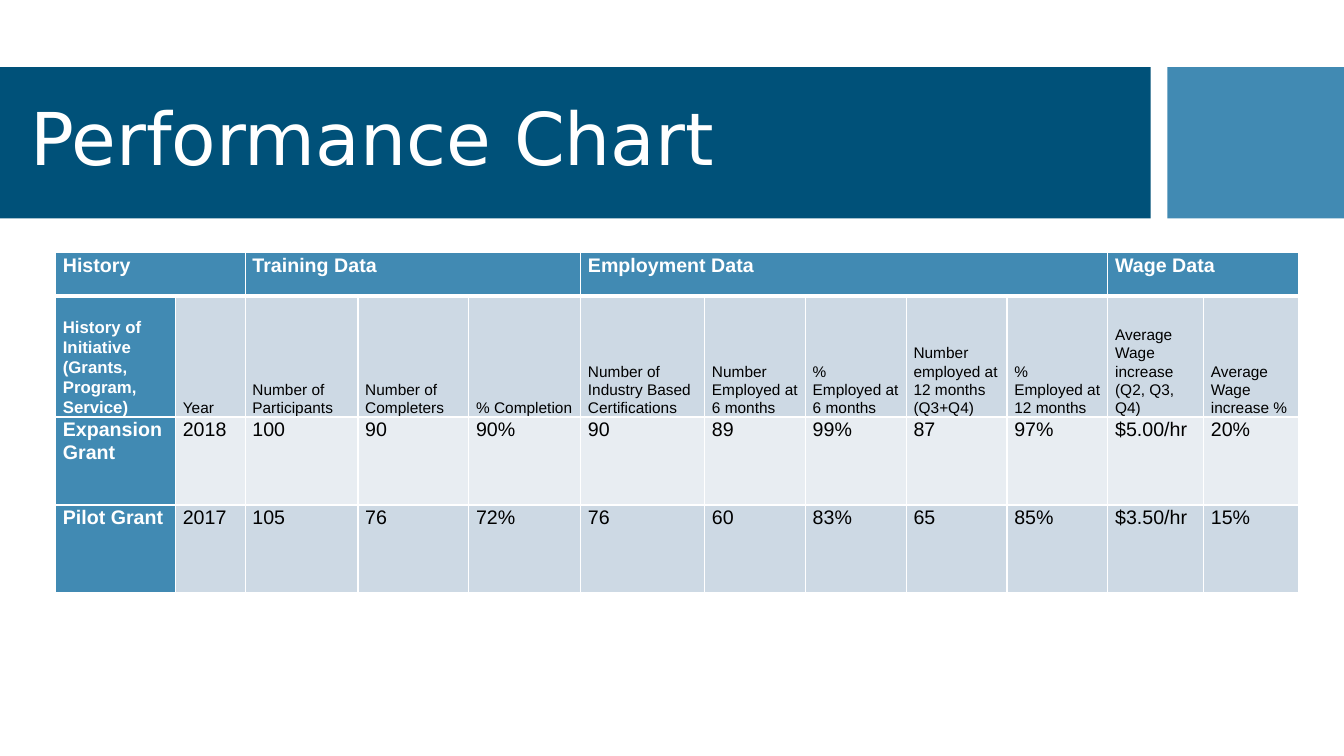
import pptx
import pptx.dml.color
import pptx.enum.shapes
import pptx.enum.text
import pptx.oxml
import pptx.oxml.ns
import pptx.util

Pt = pptx.util.Pt
RGBColor = pptx.dml.color.RGBColor
ANCHOR = pptx.enum.text.MSO_ANCHOR

NAVY = RGBColor(0x00, 0x51, 0x79)
BLUE = RGBColor(0x41, 0x8A, 0xB3)
BAND_DARK = RGBColor(0xCD, 0xD9, 0xE4)
BAND_LIGHT = RGBColor(0xE8, 0xED, 0xF2)
WHITE = RGBColor(0xFF, 0xFF, 0xFF)
BLACK = RGBColor(0x00, 0x00, 0x00)

COLUMN_WIDTHS = [85.7, 49.7, 80.6, 79.2, 79.9, 88.6, 72, 72, 72, 72, 68.4, 67.7]
ROW_HEIGHTS = [31, 86.4, 62.8, 62.8]
GROUPS = [("History", 2), ("Training Data", 3), ("Employment Data", 5), ("Wage Data", 2)]
ROWS = [
    ["History of Initiative (Grants, Program, Service)", "Year", "Number of Participants",
     "Number of Completers", "% Completion", "Number of Industry Based Certifications",
     "Number Employed at 6 months", "% Employed at 6 months",
     "Number employed at 12 months (Q3+Q4)", "% Employed at 12 months",
     "Average Wage increase (Q2, Q3, Q4)", "Average Wage increase %"],
    ["Expansion Grant", "2018", "100", "90", "90%", "90", "89", "99%", "87", "97%",
     "$5.00/hr", "20%"],
    ["Pilot Grant", "2017", "105", "76", "72%", "76", "60", "83%", "65", "85%",
     "$3.50/hr", "15%"],
]


class SlideBuilder:
    title_font = "DejaVu Sans"
    table_font = "Arial"

    def __init__(self, slide):
        self.slide = slide

    def band(self, left, top, width, height, color):
        shape = self.slide.shapes.add_shape(
            pptx.enum.shapes.MSO_SHAPE.RECTANGLE, Pt(left), Pt(top), Pt(width), Pt(height))
        shape.shadow.inherit = False
        shape.fill.solid()
        shape.fill.fore_color.rgb = color
        shape.line.fill.background()

    def title(self, text, left, top, width, height):
        """Format the title placeholder and bring it in front of the bands."""
        title = self.slide.shapes.title
        title.element.getparent().append(title.element)
        title.left, title.top, title.width, title.height = map(Pt, (left, top, width, height))
        frame = title.text_frame
        frame.text = text
        frame.word_wrap = True
        frame.auto_size = pptx.enum.text.MSO_AUTO_SIZE.NONE
        frame.vertical_anchor = ANCHOR.MIDDLE
        paragraph = frame.paragraphs[0]
        paragraph.alignment = pptx.enum.text.PP_ALIGN.LEFT
        paragraph.line_spacing = 0.9
        self.style(paragraph, self.title_font, 52, WHITE, False)

    def style(self, paragraph, name, size, color, bold):
        font = paragraph.font
        font.name, font.size, font.bold = name, Pt(size), bold
        font.color.rgb = color

    def table(self, left, top):
        table = self.slide.shapes.add_table(
            len(ROW_HEIGHTS), len(COLUMN_WIDTHS), Pt(left), Pt(top),
            Pt(sum(COLUMN_WIDTHS)), Pt(sum(ROW_HEIGHTS))).table
        for column, width in zip(table.columns, COLUMN_WIDTHS):
            column.width = Pt(width)
        for row, height in zip(table.rows, ROW_HEIGHTS):
            row.height = Pt(height)
        return table

    def cell(self, cell, text, size, bold, fill, anchor=ANCHOR.TOP, top=1, bottom=1):
        cell.text = text
        cell.margin_left = cell.margin_right = Pt(5.2)
        cell.margin_top = cell.margin_bottom = 0
        cell.vertical_anchor = anchor
        self.borders(cell, top, bottom)
        cell.fill.solid()
        cell.fill.fore_color.rgb = fill
        paragraph = cell.text_frame.paragraphs[0]
        paragraph.line_spacing = 1.07
        self.style(paragraph, self.table_font, size, WHITE if bold else BLACK, bold)

    def borders(self, cell, top, bottom):
        properties = cell._tc.get_or_add_tcPr()
        for side, width in (("L", 1), ("R", 1), ("T", top), ("B", bottom)):
            properties.append(pptx.oxml.parse_xml(
                f'<a:ln{side} {pptx.oxml.ns.nsdecls("a")} w="{Pt(width)}">'
                f'<a:solidFill><a:srgbClr val="{WHITE}"/></a:solidFill></a:ln{side}>'))


def main():
    presentation = pptx.Presentation()
    presentation.slide_width, presentation.slide_height = Pt(960), Pt(540)
    builder = SlideBuilder(presentation.slides.add_slide(presentation.slide_layouts[5]))
    builder.band(0, 48, 822, 108, NAVY)
    builder.band(833.8, 48, 126.2, 108, BLUE)
    builder.title("Performance Chart", 14.4, 59, 796.3, 85)

    table = builder.table(39.7, 180.5)
    start = 0
    for name, span in GROUPS:
        for column in range(start, start + span):
            text = name if column == start else ""
            builder.cell(table.cell(0, column), text, 14, True, BLUE, bottom=3)
        table.cell(0, start).merge(table.cell(0, start + span - 1))
        start += span

    for row, texts in enumerate(ROWS, start=1):
        is_heading = row == 1
        band = BAND_DARK if row % 2 else BAND_LIGHT
        for column, text in enumerate(texts):
            is_label = column == 0
            size = (12 if is_label else 11) if is_heading else 14
            builder.cell(table.cell(row, column), text, size, is_label,
                         BLUE if is_label else band,
                         anchor=ANCHOR.BOTTOM if is_heading else ANCHOR.TOP,
                         top=3 if is_heading else 1)
    presentation.save("out.pptx")


if __name__ == "__main__":
    main()
